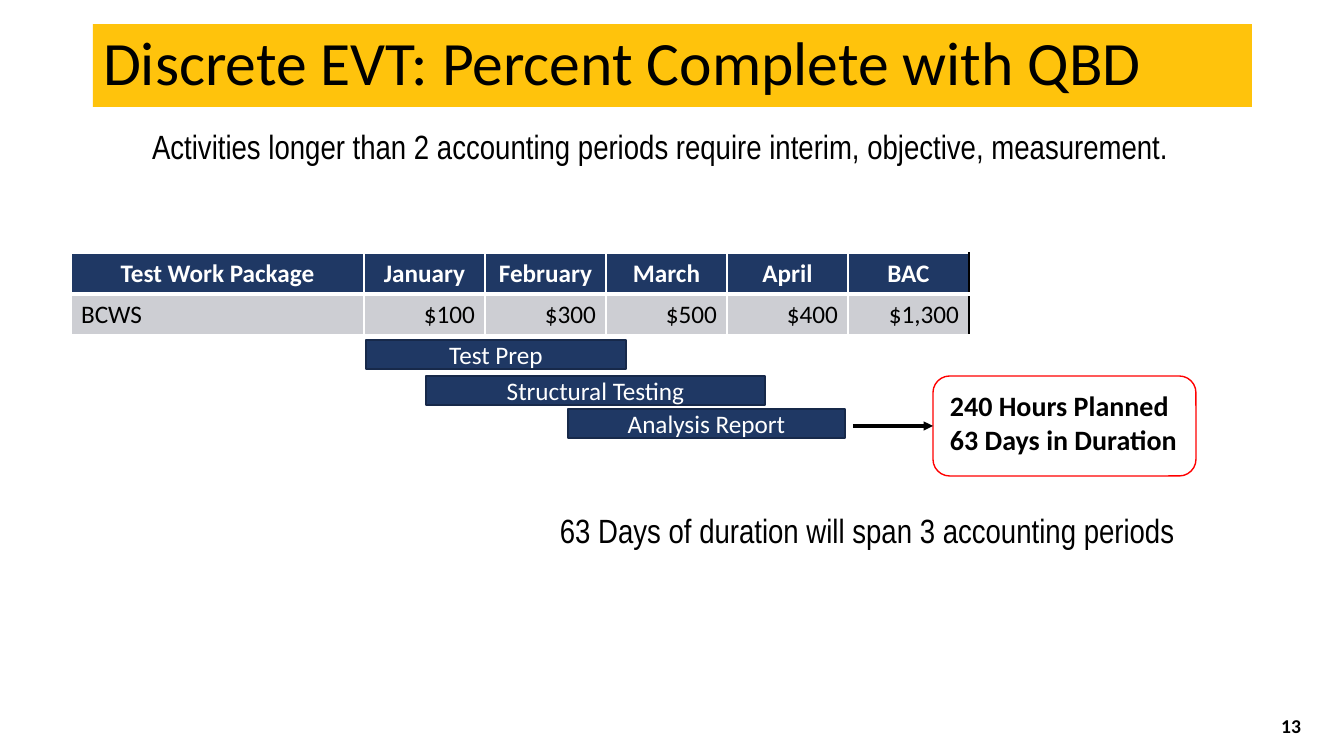
import pptx
import pptx.dml.color
import pptx.enum.shapes
import pptx.enum.text
import pptx.oxml
import pptx.oxml.ns
import pptx.util

EMU_PER_PX = 914400 / 100.8
COLORS = {
    "black": "000000", "white": "FFFFFF", "gold": "FFC30C", "navy": "1F3864",
    "navy_edge": "17294A", "silver": "CDCED3", "red": "FF0000",
}
ALIGN = pptx.enum.text.PP_ALIGN
ANCHOR = pptx.enum.text.MSO_ANCHOR
SHAPE = pptx.enum.shapes.MSO_SHAPE


def px(*lengths):
    """Turn whole pixels into EMU."""
    return [pptx.util.Emu(round(length * EMU_PER_PX)) for length in lengths]


def rgb(color):
    """Look up a named colour."""
    return pptx.dml.color.RGBColor.from_string(COLORS[color])


def element(tag, content="", **attributes):
    """Build one DrawingML element."""
    listed = " ".join(f'{key}="{value}"' for key, value in attributes.items())
    namespace = pptx.oxml.ns.nsdecls("a")
    return pptx.oxml.parse_xml(f"<a:{tag} {namespace} {listed}>{content}</a:{tag}>")


class SlideBuilder:
    """Hold the style and the current slide, and add elements to it."""

    text_style = {"name": "Calibri", "size": 18, "bold": False}
    statement_style = {"name": "Arial Narrow", "size": 24}

    def __init__(self, deck, layout):
        """Start a slide on the given layout."""
        self.slide = deck.slides.add_slide(layout)
        self.shapes = self.slide.shapes

    def fill_text(self, frame, lines, color="black", paragraph_format=None, **font_format):
        """Fill a text frame with formatted lines."""
        frame.text = "\n".join(lines)
        for paragraph in frame.paragraphs:
            for name, value in (paragraph_format or {}).items():
                setattr(paragraph, name, value)
            for run in paragraph.runs:
                style = {**self.text_style, **font_format}
                style["size"] = pptx.util.Pt(style["size"])
                for name, value in style.items():
                    setattr(run.font, name, value)
                run.font.color.rgb = rgb(color)

    def place(self, shape, box):
        """Move a shape to a pixel box."""
        for name, value in zip(("left", "top", "width", "height"), px(*box)):
            setattr(shape, name, value)

    def frame(self, shape, anchor):
        """Prepare the text frame of a shape."""
        settings = {
            "word_wrap": True, "vertical_anchor": anchor,
            "auto_size": pptx.enum.text.MSO_AUTO_SIZE.NONE,
        }
        for name, value in settings.items():
            setattr(shape.text_frame, name, value)
        return shape.text_frame

    def title(self, words, box):
        """Set the title on its gold band."""
        title = self.shapes.title
        self.place(title, box)
        title.fill.solid()
        title.fill.fore_color.rgb = rgb("gold")
        self.fill_text(self.frame(title, ANCHOR.MIDDLE), [words], size=44,
                       paragraph_format={"alignment": ALIGN.LEFT, "line_spacing": 0.9})

    def statement(self, words, box, holder=None):
        """Set a statement in the body placeholder or a new text box."""
        holder = holder or self.shapes.add_textbox(*px(*box))
        self.place(holder, box)
        frame = self.frame(holder, ANCHOR.TOP)
        self.fill_text(frame, [words], **self.statement_style,
                       paragraph_format={"space_before": pptx.util.Pt(5)})
        properties = frame.paragraphs[0]._p.get_or_add_pPr()
        properties.set("marL", "228600")
        properties.set("indent", "-228600")
        properties.append(element("buNone"))

    def text(self, lines, box, anchor=ANCHOR.TOP, **style):
        """Add a text box."""
        holder = self.shapes.add_textbox(*px(*box))
        self.fill_text(self.frame(holder, anchor), lines, **style)

    def shape(self, kind, box, line, fill=None):
        """Add an outlined shape."""
        shape = self.shapes.add_shape(kind, *px(*box))
        shape.shadow.inherit = False
        shape.line.color.rgb = rgb(line)
        shape.line.width = pptx.util.Pt(1)
        if fill:
            shape.fill.solid()
            shape.fill.fore_color.rgb = rgb(fill)
        else:
            shape.fill.background()
        return shape

    def activity(self, words, box):
        """Add a schedule bar."""
        bar = self.shape(SHAPE.RECTANGLE, box, "navy_edge", "navy")
        self.fill_text(self.frame(bar, ANCHOR.MIDDLE), [words], "white",
                       {"alignment": ALIGN.CENTER})

    def arrow(self, start, target):
        """Draw an arrow to the left side of a target."""
        middle = target.top + target.height // 2
        arrow = self.shapes.add_connector(
            pptx.enum.shapes.MSO_CONNECTOR.STRAIGHT, *px(start), middle, target.left, middle)
        arrow.end_connect(target, 1)
        arrow.line.color.rgb = rgb("black")
        arrow.line.width = pptx.util.Pt(2.25)
        arrow.line._get_or_add_ln().append(element("tailEnd", type="triangle"))
        arrow._element.spPr.append(element("effectLst"))

    def cell(self, cell, words, header, first, last):
        """Format one table cell."""
        properties = cell._tc.get_or_add_tcPr()
        for side in "LRTB":
            edge = COLORS["black" if side == "R" and last else "white"]
            width = pptx.util.Pt(3 if side == "B" and header else 1)
            color = f'<a:solidFill><a:srgbClr val="{edge}"/></a:solidFill>'
            properties.append(element(f"ln{side}", color, w=int(width)))
        cell.fill.solid()
        cell.fill.fore_color.rgb = rgb("navy" if header else "silver")
        cell.vertical_anchor = ANCHOR.MIDDLE if header else ANCHOR.TOP
        align = ALIGN.CENTER if header else ALIGN.LEFT if first else ALIGN.RIGHT
        self.fill_text(cell.text_frame, [words], "white" if header else "black",
                       {"alignment": align}, bold=header)

    def table(self, rows, left, top, widths, row_height):
        """Add a table with a header row."""
        box = px(left, top, sum(widths), row_height * len(rows))
        table = self.shapes.add_table(len(rows), len(widths), *box).table
        for column, width in zip(table.columns, px(*widths)):
            column.width = width
        for r, row in enumerate(rows):
            for c, words in enumerate(row):
                self.cell(table.cell(r, c), words, r == 0, c == 0, c == len(row) - 1)


def main():
    """Build the earned value slide."""
    deck = pptx.Presentation()
    deck.slide_width, deck.slide_height = px(1344, 756)
    page = SlideBuilder(deck, deck.slide_layouts[1])

    page.title("Discrete EVT: Percent Complete with QBD", (93, 24, 1159, 83))
    page.statement(
        "Activities longer than 2 accounting periods require interim, objective, measurement.",
        (142, 121, 1229, 50), page.slide.placeholders[1])
    page.table(
        [["Test Work Package", "January", "February", "March", "April", "BAC"],
         ["BCWS", "$100", "$300", "$500", "$400", "$1,300"]],
        71, 253, [293] + [121] * 5, 41)
    for words, left, top, width in (
            ("Test Prep", 366, 340, 260),
            ("Structural Testing", 426, 376, 339),
            ("Analysis Report", 568, 409, 277)):
        page.activity(words, (left, top, width, 29))

    callout = page.shape(SHAPE.ROUNDED_RECTANGLE, (933, 376, 263, 100), "red")
    page.text(["240 Hours Planned", "63 Days in Duration"], (940, 384, 256, 78),
              size=20, bold=True)
    page.arrow(853, callout)
    page.statement("63 Days of duration will span 3 accounting periods", (550, 505, 659, 50))
    page.text(["13"], (1009, 706, 302, 40), ANCHOR.MIDDLE, size=14, bold=True,
              paragraph_format={"alignment": ALIGN.RIGHT})
    deck.save("out.pptx")


if __name__ == "__main__":
    main()
